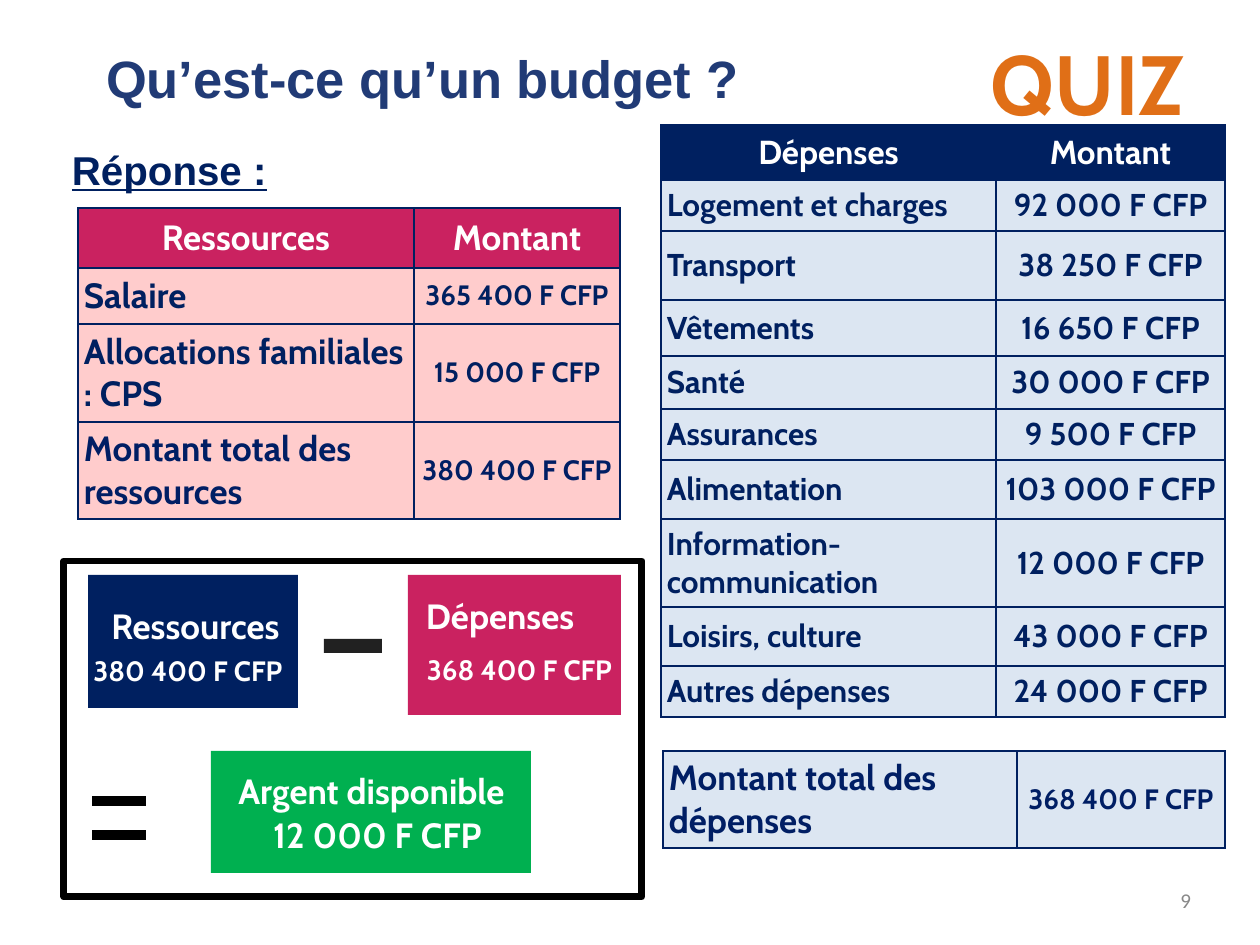
import pptx
import pptx.util
import pptx.dml.color
import pptx.enum.shapes
import pptx.enum.text
import pptx.oxml
import pptx.oxml.ns
from lxml import etree

RGB = pptx.dml.color.RGBColor
ALIGN = pptx.enum.text.PP_ALIGN
ANCHOR = pptx.enum.text.MSO_ANCHOR
RECT = pptx.enum.shapes.MSO_SHAPE.RECTANGLE

NAVY = RGB(0x00, 0x20, 0x60)
INK = RGB(0x00, 0x1E, 0x64)
BLUE = RGB(0x21, 0x3B, 0x76)
PALE = RGB(0xDC, 0xE6, 0xF2)
ROSE = RGB(0xCA, 0x22, 0x60)
PINK = RGB(0xFF, 0xCC, 0xCC)
GREEN = RGB(0x00, 0xB0, 0x50)
ORANGE = RGB(0xE0, 0x6F, 0x17)
GREY = RGB(0x88, 0x88, 0x88)
DARK = RGB(0x21, 0x21, 0x21)
BLACK = RGB(0, 0, 0)
WHITE = RGB(0xFF, 0xFF, 0xFF)

SCALE = 914400 / 126
INSET = 6


def px(n):
    return pptx.util.Emu(round(n * SCALE))


def style(par, size, color, align=ALIGN.LEFT, face="Cabin", bold=True):
    par.alignment = align
    font = par.font
    font.size = pptx.util.Pt(size)
    font.name = face
    font.bold = bold
    font.color.rgb = color


def inset(part):
    part.margin_left = part.margin_right = px(INSET)
    part.margin_top = part.margin_bottom = px(INSET)


def label(slide, box, text, size, color, align=ALIGN.LEFT, **look):
    frame = slide.shapes.add_textbox(*map(px, box)).text_frame
    frame.word_wrap = True
    inset(frame)
    par = frame.paragraphs[0]
    par.text = text
    style(par, size, color, align, **look)
    return par


def block(slide, box, fill):
    shape = slide.shapes.add_shape(RECT, *map(px, box))
    shape.shadow.inherit = False
    shape.fill.solid()
    shape.fill.fore_color.rgb = fill
    shape.line.fill.background()
    return shape


def border(cell):
    props = cell._tc.get_or_add_tcPr()
    for i, side in enumerate(("lnL", "lnR", "lnT", "lnB")):
        line = pptx.oxml.parse_xml(
            f'<a:{side} {pptx.oxml.ns.nsdecls("a")} w="12700"><a:solidFill>'
            f'<a:srgbClr val="{NAVY}"/></a:solidFill></a:{side}>')
        props.insert(i, line)


def grid(slide, left, top, cols, rows, data, fill, sizes, color=NAVY, head=None):
    """Draw a two-column table; head is the (fill, size) of its first row."""
    box = left, top, sum(cols), sum(rows)
    table = slide.shapes.add_table(len(rows), len(cols), *map(px, box)).table
    table.first_row = head is not None
    table.horz_banding = False
    for col, width in zip(table.columns, cols):
        col.width = px(width)
    for r, (height, texts) in enumerate(zip(rows, data)):
        table.rows[r].height = px(height)
        top_row = head is not None and r == 0
        for c, text in enumerate(texts):
            cell = table.cell(r, c)
            inset(cell)
            cell.vertical_anchor = ANCHOR.MIDDLE
            cell.fill.solid()
            cell.fill.fore_color.rgb = head[0] if top_row else fill
            cell.text = text
            style(cell.text_frame.paragraphs[0],
                  head[1] if top_row else sizes[c],
                  WHITE if top_row else color,
                  ALIGN.CENTER if top_row or c else ALIGN.LEFT)
            border(cell)


def header(slide, left, top):
    title = slide.shapes.title
    title.left, title.top = px(left + 16), px(top)
    title.width, title.height = px(738), px(77)
    frame = title.text_frame
    frame.text = "Qu’est-ce qu’un budget ?"
    frame.auto_size = pptx.enum.text.MSO_AUTO_SIZE.NONE
    frame.vertical_anchor = ANCHOR.TOP
    inset(frame)
    style(frame.paragraphs[0], 30, BLUE, face="Arial")
    label(slide, (left + 901, top - 14, 221, 115), "QUIZ", 48, ORANGE)
    answer = label(slide, (left - 18, top + 99, 212, 58), "Réponse :", 23,
                   NAVY, face="Arial")
    answer.font.underline = True
    answer.space_before = pptx.util.Pt(5)


def income(slide, left, top):
    data = [("Ressources", "Montant"),
            ("Salaire", "365 400 F CFP"),
            ("Allocations familiales : CPS", "15 000 F CFP")]
    cols, rows, sizes = (336, 206), (60, 56, 98), (20, 16)
    grid(slide, left, top, cols, rows, data, PINK, sizes, head=(ROSE, 20))
    total = [("Montant total des ressources", "380 400 F CFP")]
    grid(slide, left, top + sum(rows), cols, (97,), total, PINK, sizes, INK)


def costs(slide, left, top):
    data = [("Dépenses", "Montant"),
            ("Logement et charges", "92 000 F CFP"),
            ("Transport", "38 250 F CFP"),
            ("Vêtements", "16 650 F CFP"),
            ("Santé", "30 000 F CFP"),
            ("Assurances", "9 500 F CFP"),
            ("Alimentation", "103 000 F CFP"),
            ("Information-communication", "12 000 F CFP"),
            ("Loisirs, culture", "43 000 F CFP"),
            ("Autres dépenses", "24 000 F CFP")]
    rows = (55, 51, 69, 56, 53, 51, 59, 88, 59, 51)
    grid(slide, left, top, (335, 229), rows, data, PALE, (18, 18),
         head=(NAVY, 19))
    total = [("Montant total des dépenses", "368 400 F CFP")]
    grid(slide, left + 2, top + 626, (354, 208), (97,), total, PALE,
         (20, 16), INK)


def equal(slide, left, top):
    wide, bar, step = 58, 14, 34
    build = slide.shapes.build_freeform(left, top, scale=SCALE)
    for y in (top, top + step):
        build.move_to(left, y)
        build.add_line_segments([(left + wide, y), (left + wide, y + bar),
                                 (left, y + bar)])
    sign = build.convert_to_shape()
    sign.shadow.inherit = False
    sign.fill.solid()
    sign.fill.fore_color.rgb = BLACK
    sign.line.color.rgb = WHITE
    sign.line.width = pptx.util.Pt(2)


def balance(slide, left, top):
    # Frame
    frame = block(slide, (left, top, 578, 336), WHITE)
    frame.fill.background()
    frame.line.color.rgb = BLACK
    frame.line.width = pptx.util.Pt(4)
    etree.SubElement(frame.line._ln, pptx.oxml.ns.qn("a:round"))

    # Coloured blocks and signs
    for x, y, wide, high, fill in ((24, 14, 210, 133, NAVY),
                                   (344, 14, 213, 140, ROSE),
                                   (260, 78, 58, 14, DARK),
                                   (147, 190, 320, 122, GREEN)):
        block(slide, (left + x, top + y, wide, high), fill)
    equal(slide, left + 26, top + 233)

    # Names and amounts
    mid = ALIGN.CENTER
    for x, y, wide, high, text, size, align in (
            (4, 37, 255, 55, "Ressources", 20, mid),
            (5, 87, 238, 47, "380 400 F CFP", 16, mid),
            (356, 27, 200, 55, "Dépenses", 20, ALIGN.LEFT),
            (354, 86, 203, 47, "368 400 F CFP", 16, mid),
            (134, 202, 347, 55, "Argent disponible", 20, mid),
            (169, 246, 289, 55, "12 000 F CFP", 20, mid)):
        label(slide, (left + x, top + y, wide, high), text, size, WHITE, align)


def main():
    deck = pptx.Presentation()
    deck.slide_width, deck.slide_height = px(1260), px(945)
    slide = deck.slides.add_slide(deck.slide_layouts[5])
    header(slide, 84, 40)
    costs(slide, 661, 125)
    income(slide, 78, 208)
    balance(slide, 64, 561)
    # Slide number
    label(slide, (1160, 882, 37, 37), "9", 12, GREY, ALIGN.RIGHT,
          face="Calibri", bold=False)
    deck.save("out.pptx")


if __name__ == "__main__":
    main()
